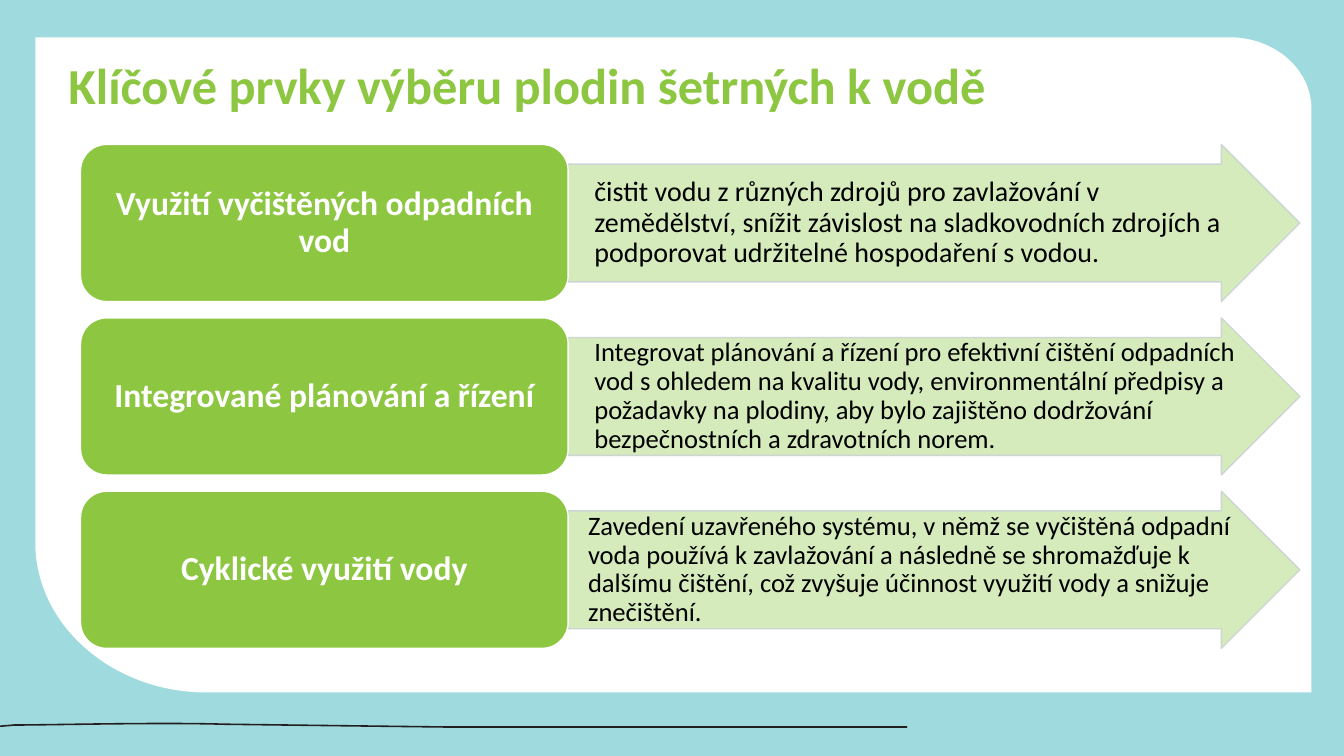
from pptx import Presentation
from pptx.dml.color import RGBColor
from pptx.enum.shapes import MSO_SHAPE
from pptx.enum.text import MSO_ANCHOR, MSO_AUTO_SIZE, PP_ALIGN
from pptx.oxml.ns import qn
from pptx.util import Cm, Pt
from lxml.etree import SubElement

COLORS = {
    "water": "9FDADF", "panel": "FFFFFF", "green": "8DC641", "pale": "D6EBBB",
    "edge": "CAD3D4", "wave": "231F20", "white": "FFFFFF", "black": "000000",
}
TITLE = "Klíčové prvky výběru plodin šetrných k vodě"
ROWS = [
    ("Využití vyčištěných odpadních vod",
     "čistit vodu z různých zdrojů pro zavlažování v zemědělství, snížit závislost "
     "na sladkovodních zdrojích a podporovat udržitelné hospodaření s vodou.", 20, 0.66),
    ("Integrované plánování a řízení",
     "Integrovat plánování a řízení pro efektivní čištění odpadních vod s ohledem "
     "na kvalitu vody, environmentální předpisy a požadavky na plodiny, aby bylo "
     "zajištěno dodržování bezpečnostních a zdravotních norem.", 19, 0.66),
    ("Cyklické využití vody",
     "Zavedení uzavřeného systému, v němž se vyčištěná odpadní voda používá "
     "k zavlažování a následně se shromažďuje k dalšímu čištění, což zvyšuje "
     "účinnost využití vody a snižuje znečištění.", 19, 0.5),
]


def rgb(name):
    """Return the named palette colour."""
    return RGBColor.from_string(COLORS[name])


def add_outline(s, start, segments, color):
    """Draw a closed outline in cm from one-point lines and three-point curves."""
    builder = s.shapes.build_freeform(Cm(start[0]), Cm(start[1]))
    builder.add_line_segments([(Cm(x), Cm(y)) for seg in segments for x, y in seg], close=True)
    sp = builder.convert_to_shape()
    sp.shadow.inherit = False
    sp.fill.solid()
    sp.fill.fore_color.rgb = rgb(color)
    sp.line.fill.background()
    path = sp._element.find(".//" + qn("a:path"))
    lines = iter(path.findall(qn("a:lnTo")))
    for seg in segments:
        steps = [next(lines) for point in seg]
        if len(seg) == 3:
            bezier = SubElement(path, qn("a:cubicBezTo"))
            steps[0].addprevious(bezier)
            for step in steps:
                bezier.append(step[0])
                path.remove(step)


def add_panel(s, left, top, width, height):
    """Draw the white panel with its two rounded corners."""
    right, bottom = left + width, top + height
    rx, ry, bx, by = 2.06, 1.8, 4.32, 3.78
    k = 0.45
    segments = [
        [(right - rx, top)],
        [(right - rx * k, top), (right, top + ry * k), (right, top + ry)],
        [(right, bottom)],
        [(left + bx, bottom)],
        [(left + bx * k, bottom), (left, bottom - by * k), (left, bottom - by)],
    ]
    add_outline(s, (left, top), segments, "panel")


def add_wave(s, left, top, width):
    """Draw the thin wavy line at the foot of the slide."""
    bends = [(width, 0.1), (11.25, 0.1),
             (11.2, 0.1), (7.11, 0.05), (5.66, 0.03),
             (3.94, -0.02), (1.32, 0.05), (0.36, 0.05),
             (0.15, 0.07), (0.03, 0.08), (0, 0.08)]
    upper = [(left + x, top + y) for x, y in bends]
    lower = [(x, y + 0.04) for x, y in reversed(upper)]
    segments = [[upper[1]], *[upper[i:i + 3] for i in (2, 5, 8)],
                [lower[0]], *[lower[i:i + 3] for i in (1, 4, 7)], [lower[10]]]
    add_outline(s, upper[0], segments, "wave")


def set_text(sp, text, size, color, bold=False, align=PP_ALIGN.LEFT, anchor=MSO_ANCHOR.MIDDLE):
    """Fill a shape with one formatted paragraph."""
    tf = sp.text_frame
    tf.word_wrap = True
    tf.auto_size = MSO_AUTO_SIZE.NONE
    tf.vertical_anchor = anchor
    tf.text = text
    p = tf.paragraphs[0]
    p.alignment = align
    p.line_spacing = 0.9
    p.space_before = Pt(0)
    r = p.runs[0]
    r.font.name = "Calibri"
    r.font.size = Pt(size)
    r.font.bold = bold
    r.font.color.rgb = rgb(color)


def add_block(s, kind, box, fill, line):
    """Add a filled preset shape with a thin outline."""
    sp = s.shapes.add_shape(kind, *[Cm(v) for v in box])
    sp.shadow.inherit = False
    sp.fill.solid()
    sp.fill.fore_color.rgb = rgb(fill)
    sp.line.color.rgb = rgb(line)
    sp.line.width = Pt(1)
    return sp


def add_title(s, left, top, width, height):
    """Place the slide title in front of the panel."""
    sp = s.shapes.title
    s.shapes._spTree.append(sp._element)
    sp.left, sp.top, sp.width, sp.height = Cm(left), Cm(top), Cm(width), Cm(height)
    set_text(sp, TITLE, 36, "green", bold=True, anchor=MSO_ANCHOR.TOP)


def add_row(s, left, top, width, height, row):
    """Draw one heading box and the arrow that explains it."""
    heading, detail, size, indent = row
    box_width = 12.29
    arrow = add_block(s, MSO_SHAPE.RIGHT_ARROW,
                      (left + box_width, top, width - box_width, height), "pale", "edge")
    arrow.adjustments[0] = 0.75
    arrow.adjustments[1] = 0.5
    color = arrow.line._ln.find(".//" + qn("a:srgbClr"))
    SubElement(color, qn("a:alpha")).set("val", "89000")
    tf = arrow.text_frame
    tf.margin_left = Cm(indent)
    tf.margin_right = tf.margin_top = tf.margin_bottom = Cm(0.03)
    set_text(arrow, detail, size, "black")

    box = add_block(s, MSO_SHAPE.ROUNDED_RECTANGLE, (left, top, box_width, height),
                    "green", "white")
    set_text(box, heading, 24, "white", bold=True, align=PP_ALIGN.CENTER)


def add_rows(s, left, top, width, height):
    """Stack the rows with equal gaps in the given box."""
    gap = 0.41
    row_height = (height - gap * (len(ROWS) - 1)) / len(ROWS)
    for i, row in enumerate(ROWS):
        add_row(s, left, top + i * (row_height + gap), width, row_height, row)


def main():
    """Build and save the slide."""
    prs = Presentation()
    prs.slide_width, prs.slide_height = Cm(33.87), Cm(19.05)
    s = prs.slides.add_slide(prs.slide_layouts[5])
    s.background.fill.solid()
    s.background.fill.fore_color.rgb = rgb("water")
    add_panel(s, 0.89, 0.94, 32.16, 16.51)
    add_wave(s, 0, 18.2, 22.86)
    add_title(s, 1.47, 1.4, 29.44, 2.2)
    add_rows(s, 2.03, 3.64, 30.73, 12.7)
    prs.save("out.pptx")


if __name__ == "__main__":
    main()
